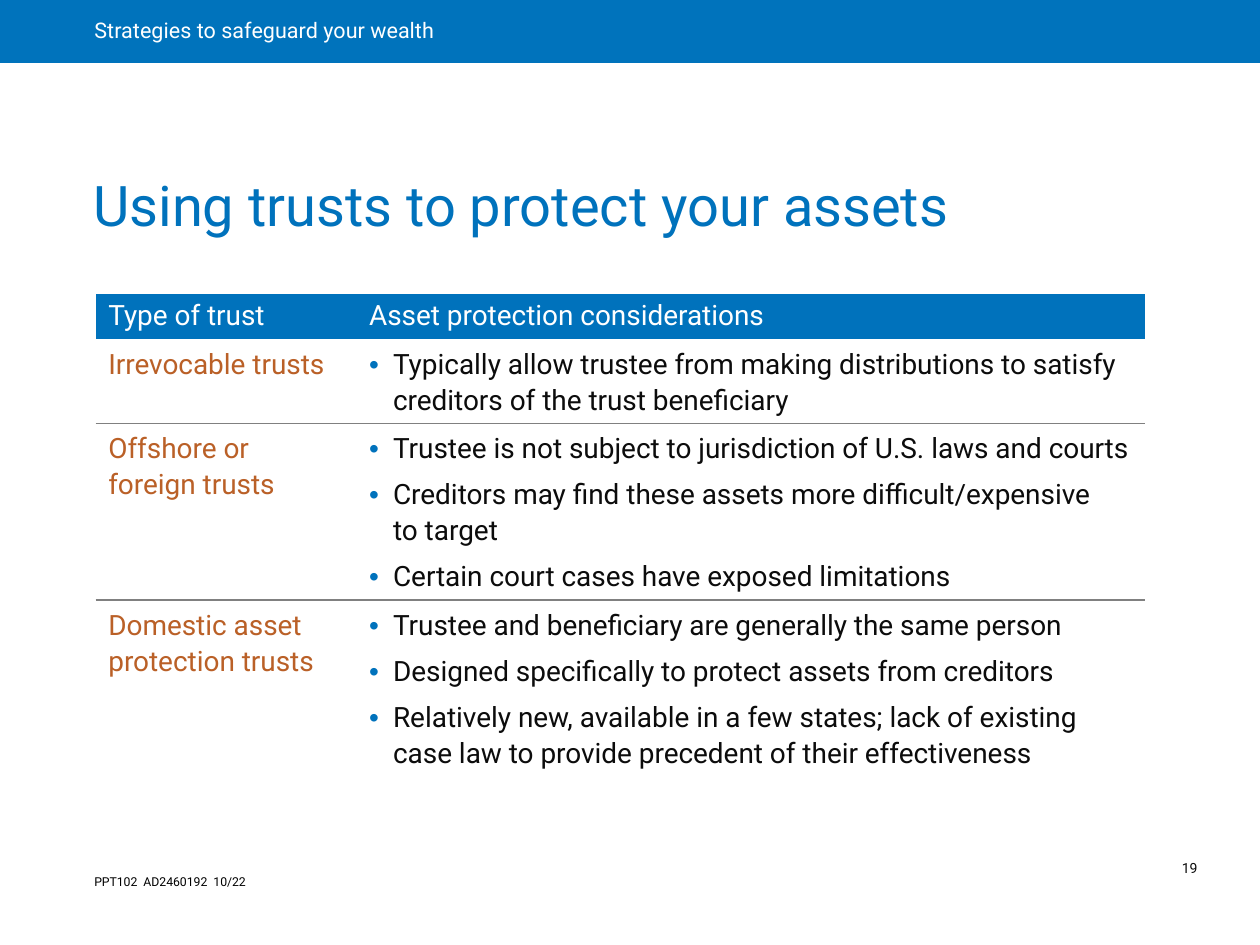
import copy
from dataclasses import dataclass

import pptx
import pptx.dml.color
import pptx.enum.shapes
import pptx.enum.text
import pptx.oxml
import pptx.oxml.ns
import pptx.util

Inches = pptx.util.Inches
Pt = pptx.util.Pt
ALIGN = pptx.enum.text.PP_ALIGN
ANCHOR = pptx.enum.text.MSO_ANCHOR
qn = pptx.oxml.ns.qn


@dataclass(frozen=True)
class Theme:
    font: str = "Roboto"
    band: str = "0073BC"
    blue: str = "0072BC"
    orange: str = "BA6027"
    ink: str = "0C0C0C"
    black: str = "000000"
    white: str = "FFFFFF"
    rule: str = "808080"
    title_size: float = 32
    band_size: float = 12.3
    table_size: float = 16
    number_size: float = 8
    code_size: float = 7


@dataclass(frozen=True)
class Trust:
    name: str
    points: tuple[str, ...]
    height: float


THEME = Theme()
HEADINGS = ("Type of trust", "Asset protection considerations")
HEADER_HEIGHT = 0.36
COLUMN_WIDTHS = (1.97, 6.36)
COLUMN_INSETS = (0.1, 0.2)
TRUSTS = (
    Trust("Irrevocable trusts", (
        "Typically allow trustee from making distributions to satisfy "
        "creditors of the trust beneficiary",
    ), 0.67),
    Trust("Offshore or\vforeign trusts", (
        "Trustee is not subject to jurisdiction of U.S. laws and courts",
        "Creditors may find these assets more difficult/expensive \vto target",
        "Certain court cases have exposed limitations",
    ), 1.4),
    Trust("Domestic asset protection trusts", (
        "Trustee and beneficiary are generally the same person",
        "Designed specifically to protect assets from creditors",
        "Relatively new, available in a few states; lack of existing case law "
        "to provide precedent of their effectiveness",
    ), 1.39),
)


def rgb(color: str) -> pptx.dml.color.RGBColor:
    return pptx.dml.color.RGBColor.from_string(color)


def set_attrs(obj, values: dict) -> None:
    for name, value in values.items():
        setattr(obj, name, value)


def write(p, text: str, size: float, color: str, **para_format) -> None:
    """Fill one paragraph; line breaks take the format of the text."""
    p.text = text
    set_attrs(p, {"alignment": ALIGN.LEFT, **para_format})
    for r in p.runs:
        set_attrs(r.font, {"name": THEME.font, "size": Pt(size), "bold": False})
        r.font.color.rgb = rgb(color)
    for br in p._p.findall(qn("a:br")):
        br.append(copy.deepcopy(p.runs[0]._r.rPr))


def set_frame(tf, insets: tuple[float, ...], anchor=ANCHOR.TOP) -> None:
    sides = ("margin_left", "margin_top", "margin_right", "margin_bottom")
    set_attrs(tf, {"word_wrap": True, "vertical_anchor": anchor,
                   "auto_size": pptx.enum.text.MSO_AUTO_SIZE.NONE})
    set_attrs(tf, dict(zip(sides, map(Inches, insets))))


def add_label(s, box: tuple[float, ...], insets: tuple[float, ...],
              text: str, size: float, color: str, **para_format) -> None:
    tf = s.shapes.add_textbox(*map(Inches, box)).text_frame
    set_frame(tf, insets)
    write(tf.paragraphs[0], text, size, color, **para_format)


def add_bullet(p) -> None:
    pPr = p._p.get_or_add_pPr()
    pPr.set("marL", str(Inches(0.19)))
    pPr.set("indent", str(-Inches(0.19)))
    color = pptx.oxml.ns.nsdecls("a")
    for xml in (f'<a:buClr {color}><a:srgbClr val="{THEME.blue}"/></a:buClr>',
                f'<a:buFont {color} typeface="Arial"/>',
                f'<a:buChar {color} char="•"/>'):
        pPr.append(pptx.oxml.parse_xml(xml))


def set_borders(cell, ruled: str) -> None:
    """Rule the named sides (letters of LRTB) and clear the others."""
    tcPr = cell._tc.get_or_add_tcPr()
    for side in "LRTB":
        fill = (f'<a:solidFill><a:srgbClr val="{THEME.rule}"/></a:solidFill>'
                if side in ruled else "<a:noFill/>")
        tcPr.append(pptx.oxml.parse_xml(
            f'<a:ln{side} {pptx.oxml.ns.nsdecls("a")} w="{Pt(1)}">{fill}</a:ln{side}>'))


def style_cell(cell, inset: float, fill: str, ruled: str, anchor) -> None:
    set_borders(cell, ruled)
    cell.fill.solid()
    cell.fill.fore_color.rgb = rgb(fill)
    set_attrs(cell, {"margin_left": Inches(inset), "margin_right": Inches(0.1),
                     "margin_top": Inches(0.05), "margin_bottom": Inches(0.05),
                     "vertical_anchor": anchor})


def add_trust_table(s) -> None:
    heights = (HEADER_HEIGHT, *(t.height for t in TRUSTS))
    box = (0.76, 2.33, sum(COLUMN_WIDTHS), sum(heights))
    table = s.shapes.add_table(len(heights), len(COLUMN_WIDTHS),
                               *map(Inches, box)).table
    set_attrs(table, {"first_row": False, "horz_banding": False})
    for column, width in zip(table.columns, COLUMN_WIDTHS):
        column.width = Inches(width)
    for row, height in zip(table.rows, heights):
        row.height = Inches(height)

    # Header row
    for col, heading in enumerate(HEADINGS):
        cell = table.cell(0, col)
        style_cell(cell, COLUMN_INSETS[col], THEME.blue, "", ANCHOR.MIDDLE)
        write(cell.text_frame.paragraphs[0], heading, THEME.table_size, THEME.white)

    # One row per trust, ruled between rows
    spacing = {"line_spacing": 1.1, "space_after": Pt(6)}
    for row, trust in enumerate(TRUSTS, start=1):
        ruled = ("T" if row > 1 else "") + ("B" if row < len(TRUSTS) else "")
        name, points = table.cell(row, 0), table.cell(row, 1)
        for cell, inset in zip((name, points), COLUMN_INSETS):
            style_cell(cell, inset, THEME.white, ruled, ANCHOR.TOP)
        write(name.text_frame.paragraphs[0], trust.name,
              THEME.table_size, THEME.orange, **spacing)
        tf = points.text_frame
        for i, point in enumerate(trust.points):
            p = tf.add_paragraph() if i else tf.paragraphs[0]
            add_bullet(p)
            write(p, point, THEME.table_size, THEME.ink, **spacing)


def add_band(s) -> None:
    sp = s.shapes.add_shape(pptx.enum.shapes.MSO_SHAPE.RECTANGLE,
                            0, 0, Inches(10), Inches(0.5))
    sp.shadow.inherit = False
    sp.fill.solid()
    sp.fill.fore_color.rgb = rgb(THEME.band)
    sp.line.fill.background()
    set_frame(sp.text_frame, (0.75, 0, 0.22, 0), ANCHOR.MIDDLE)
    write(sp.text_frame.paragraphs[0], "Strategies to safeguard your wealth",
          THEME.band_size, THEME.white, line_spacing=0.9)


def add_title(s) -> None:
    sp = s.shapes.title
    box = map(Inches, (0.63, 1.12, 8.62, 0.83))
    set_attrs(sp, dict(zip(("left", "top", "width", "height"), box)))
    set_frame(sp.text_frame, (0.11, 0.06, 0.11, 0.06), ANCHOR.BOTTOM)
    write(sp.text_frame.paragraphs[0], "Using trusts to protect your assets",
          THEME.title_size, THEME.blue, line_spacing=0.9)


def main() -> None:
    prs = pptx.Presentation()
    set_attrs(prs, {"slide_width": Inches(10), "slide_height": Inches(7.5)})
    s = prs.slides.add_slide(prs.slide_layouts[5])
    add_band(s)
    add_title(s)
    add_trust_table(s)
    # Document code and page number
    add_label(s, (0.65, 6.89, 7.63, 0.34), (0.1, 0.05, 0.1, 0.05),
              "PPT102  AD2460192  10/22", THEME.code_size, THEME.black)
    add_label(s, (9.25, 6.8, 0.5, 0.21), (0.13, 0.04, 0.04, 0.04),
              "19", THEME.number_size, THEME.ink, line_spacing=0.9)
    prs.save("out.pptx")


if __name__ == "__main__":
    main()
